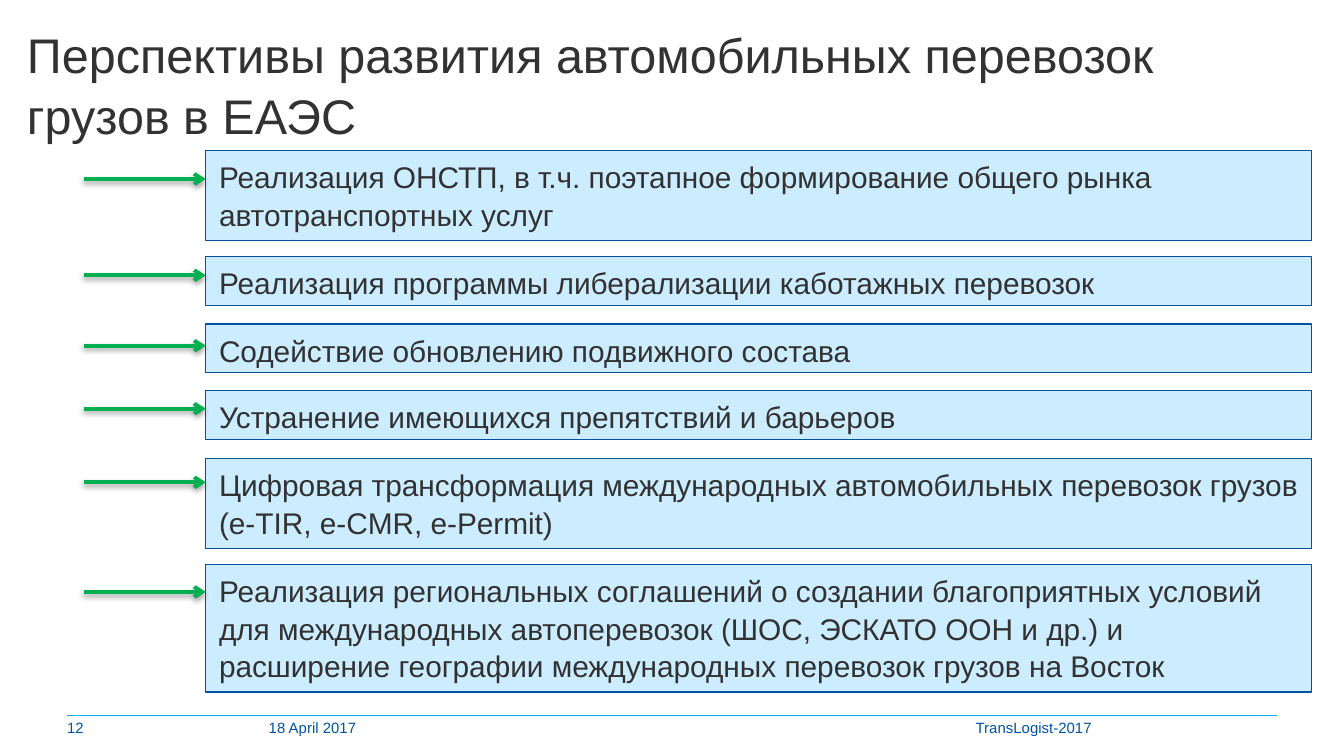
from lxml import etree
from pptx import Presentation
from pptx.dml.color import RGBColor
from pptx.enum.shapes import MSO_CONNECTOR, MSO_SHAPE
from pptx.enum.text import MSO_ANCHOR, MSO_AUTO_SIZE, PP_ALIGN
from pptx.oxml.ns import qn
from pptx.util import Cm, Pt

RECT = MSO_SHAPE.RECTANGLE
STRAIGHT = MSO_CONNECTOR.STRAIGHT
TOP, MIDDLE = MSO_ANCHOR.TOP, MSO_ANCHOR.MIDDLE
LEFT = PP_ALIGN.LEFT
FIT_SHAPE = MSO_AUTO_SIZE.SHAPE_TO_FIT_TEXT

COLORS = {
    "text": "323232",
    "blue": "0052A4",
    "box": "CCECFF",
    "rule": "00B1EB",
    "arrow": "00B050",
    "shadow": "000000",
}


class SlideBuilder:
    font = "Arial"

    def __init__(self, slide):
        self.s = slide

    def color(self, name):
        return RGBColor.from_string(COLORS[name])

    def fill_text(self, sp, text, size, color, spacing=1.0, **frame):
        tf = sp.text_frame
        for name, value in {"word_wrap": True, **frame}.items():
            setattr(tf, name, value)
        p = tf.paragraphs[0]
        p.alignment = LEFT
        p.line_spacing = spacing
        r = p.add_run()
        r.text = text
        for name, value in {"name": self.font, "size": Pt(size)}.items():
            setattr(r.font, name, value)
        r.font.color.rgb = self.color(color)

    def label(self, text, x, y, w, h, size, color, **frame):
        sp = self.s.shapes.add_textbox(Cm(x), Cm(y), Cm(w), Cm(h))
        margins = dict.fromkeys(
            ("margin_left", "margin_top", "margin_right", "margin_bottom"), 0)
        self.fill_text(sp, text, size, color, **{**margins, **frame})

    def box(self, text, x, y, w, h):
        sp = self.s.shapes.add_shape(RECT, Cm(x), Cm(y), Cm(w), Cm(h))
        sp.shadow.inherit = False
        sp.fill.solid()
        sp.fill.fore_color.rgb = self.color("box")
        sp.line.color.rgb = self.color("blue")
        sp.line.width = Pt(0.75)
        self.fill_text(sp, text, 16, "text", spacing=1.05,
                       vertical_anchor=TOP, auto_size=FIT_SHAPE)

    def line(self, x1, x2, y, color, width):
        sp = self.s.shapes.add_connector(STRAIGHT, Cm(x1), Cm(y), Cm(x2), Cm(y))
        sp.line.color.rgb = self.color(color)
        sp.line.width = Pt(width)
        effects = etree.SubElement(sp._element.spPr, qn("a:effectLst"))
        return sp, effects

    def arrow(self, x1, x2, y):
        sp, effects = self.line(x1, x2, y, "arrow", 2)
        ln = sp._element.spPr.find(qn("a:ln"))
        etree.SubElement(ln, qn("a:tailEnd"), type="arrow")
        # Soft shadow straight below the arrow
        shadow = etree.SubElement(
            effects, qn("a:outerShdw"), blurRad=str(int(Pt(3.1))),
            dist=str(int(Pt(1.6))), dir="5400000", rotWithShape="0")
        clr = etree.SubElement(shadow, qn("a:srgbClr"), val=COLORS["shadow"])
        etree.SubElement(clr, qn("a:alpha"), val="38000")


# Box top, box height, arrow height, text
PROSPECTS = [
    (2.84, 1.7, 3.38, "Реализация ОНСТП, в т.ч. поэтапное формирование общего "
                      "рынка автотранспортных услуг"),
    (4.85, 0.92, 5.2, "Реализация программы либерализации каботажных перевозок"),
    (6.12, 0.92, 6.53, "Содействие обновлению подвижного состава"),
    (7.38, 0.92, 7.72, "Устранение имеющихся препятствий и барьеров"),
    (8.66, 1.7, 9.11, "Цифровая трансформация международных автомобильных "
                      "перевозок грузов (e-TIR, e-CMR, e-Permit)"),
    (10.66, 2.41, 11.18, "Реализация региональных соглашений о создании "
                         "благоприятных условий для международных автоперевозок "
                         "(ШОС, ЭСКАТО ООН и др.) и расширение географии "
                         "международных перевозок грузов на Восток"),
]
# Left, width, text
FOOTER = [
    (1.27, 3.56, "12"),
    (5.08, 3.81, "18 April 2017"),
    (18.44, 5.69, "TransLogist-2017"),
]
ARROW_X, BOX_X, BOX_W = 1.58, 3.89, 20.9
FOOTER_Y = 13.51


def main():
    prs = Presentation()
    prs.slide_width, prs.slide_height = Cm(25.4), Cm(14.28)
    b = SlideBuilder(prs.slides.add_slide(prs.slide_layouts[6]))

    # Title
    b.label("Перспективы развития автомобильных перевозок грузов в ЕАЭС",
            0.51, 0.28, 21.69, 1.83, 26, "text",
            spacing=1.05, margin_top=Cm(0.13), vertical_anchor=TOP)

    # Prospects with their arrows
    for top, height, arrow_y, text in PROSPECTS:
        b.box(text, BOX_X, top, BOX_W, height)
        b.arrow(ARROW_X, BOX_X, arrow_y)

    # Footer
    b.line(1.27, 24.13, FOOTER_Y, "rule", 0.75)
    for x, w, text in FOOTER:
        b.label(text, x, FOOTER_Y, w, 0.48, 8, "blue", vertical_anchor=MIDDLE)

    prs.save("out.pptx")


if __name__ == "__main__":
    main()
